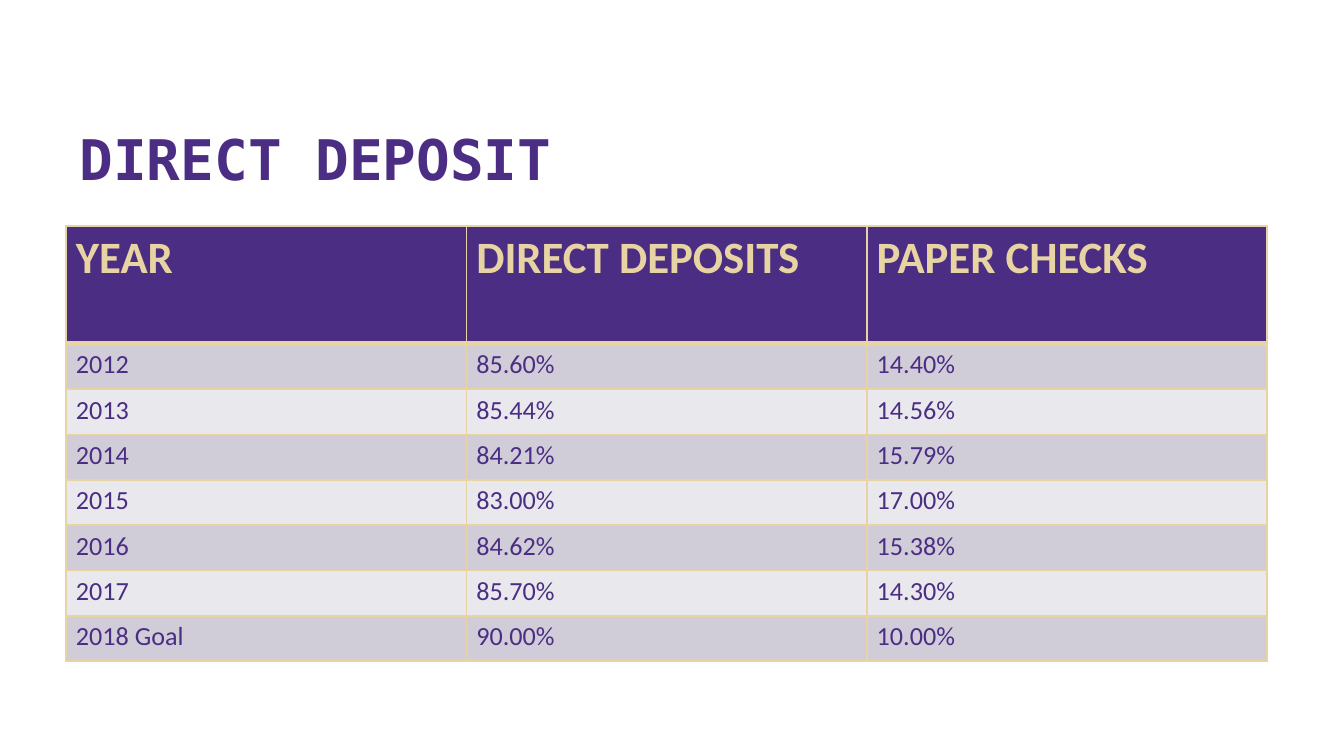
import pptx
import pptx.dml.color
import pptx.enum.text
import pptx.oxml.ns
import pptx.util
from lxml import etree

Pt = pptx.util.Pt

COLORS = {
    "purple": "4B2E83",
    "gold": "E8D3A2",
    "dark_band": "D0CDD9",
    "light_band": "E9E8ED",
}
HEADINGS = ["YEAR", "DIRECT DEPOSITS", "PAPER CHECKS"]
SHARES = [
    ["2012", "85.60%", "14.40%"],
    ["2013", "85.44%", "14.56%"],
    ["2014", "84.21%", "15.79%"],
    ["2015", "83.00%", "17.00%"],
    ["2016", "84.62%", "15.38%"],
    ["2017", "85.70%", "14.30%"],
    ["2018 Goal", "90.00%", "10.00%"],
]
LEFT = 35.4
COLUMN_WIDTH = 214.5
HEADING_HEIGHT = 63.2
ROW_HEIGHT = 24.3


def rgb(name):
    return pptx.dml.color.RGBColor.from_string(COLORS[name])


def add_run(paragraph, text, font, size, color, bold):
    run = paragraph.add_run()
    run.text = text
    run.font.name = font
    run.font.size = Pt(size)
    run.font.color.rgb = rgb(color)
    run.font.bold = bold


def add_title(slide, text):
    title = slide.shapes.title
    title.left, title.top = Pt(LEFT), Pt(28.1)
    title.width, title.height = Pt(645), Pt(78.5)
    frame = title.text_frame
    frame.auto_size = pptx.enum.text.MSO_AUTO_SIZE.NONE
    frame.vertical_anchor = pptx.enum.text.MSO_ANCHOR.BOTTOM
    paragraph = frame.paragraphs[0]
    paragraph.alignment = pptx.enum.text.PP_ALIGN.LEFT
    add_run(paragraph, text, "DejaVu Sans Mono", 30, "purple", True)


def set_borders(cell, top, bottom):
    """Draw gold cell borders; must run before the cell gets its fill."""
    qn = pptx.oxml.ns.qn
    properties = cell._tc.get_or_add_tcPr()
    for tag, width in (("a:lnL", 1), ("a:lnR", 1), ("a:lnT", top), ("a:lnB", bottom)):
        line = etree.SubElement(properties, qn(tag), w=str(Pt(width)))
        fill = etree.SubElement(line, qn("a:solidFill"))
        etree.SubElement(fill, qn("a:srgbClr"), val=COLORS["gold"])


def format_cell(cell, text, fill, size, color, bold, top=1, bottom=1):
    cell.margin_left = cell.margin_right = Pt(5.3)
    cell.margin_top = cell.margin_bottom = Pt(2.7)
    set_borders(cell, top, bottom)
    cell.fill.solid()
    cell.fill.fore_color.rgb = rgb(fill)
    add_run(cell.text_frame.paragraphs[0], text, "Calibri", size, color, bold)


def add_deposit_table(slide):
    height = HEADING_HEIGHT + ROW_HEIGHT * len(SHARES)
    table = slide.shapes.add_table(
        len(SHARES) + 1, len(HEADINGS), Pt(LEFT), Pt(121),
        Pt(COLUMN_WIDTH * len(HEADINGS)), Pt(height)).table
    table.horz_banding = False
    for column in table.columns:
        column.width = Pt(COLUMN_WIDTH)
    for row in table.rows:
        row.height = Pt(ROW_HEIGHT)
    table.rows[0].height = Pt(HEADING_HEIGHT)

    for column, heading in enumerate(HEADINGS):
        format_cell(table.cell(0, column), heading, "purple", 24, "gold", True, bottom=3)
    for row, shares in enumerate(SHARES, start=1):
        band = "dark_band" if row % 2 else "light_band"
        for column, share in enumerate(shares):
            format_cell(table.cell(row, column), share, band, 14, "purple", False,
                        top=3 if row == 1 else 1)


def main():
    deck = pptx.Presentation()
    deck.slide_width, deck.slide_height = Pt(720), Pt(405)
    slide = deck.slides.add_slide(deck.slide_layouts.get_by_name("Title Only"))
    add_title(slide, "DIRECT DEPOSIT")
    add_deposit_table(slide)
    deck.save("out.pptx")


if __name__ == "__main__":
    main()
